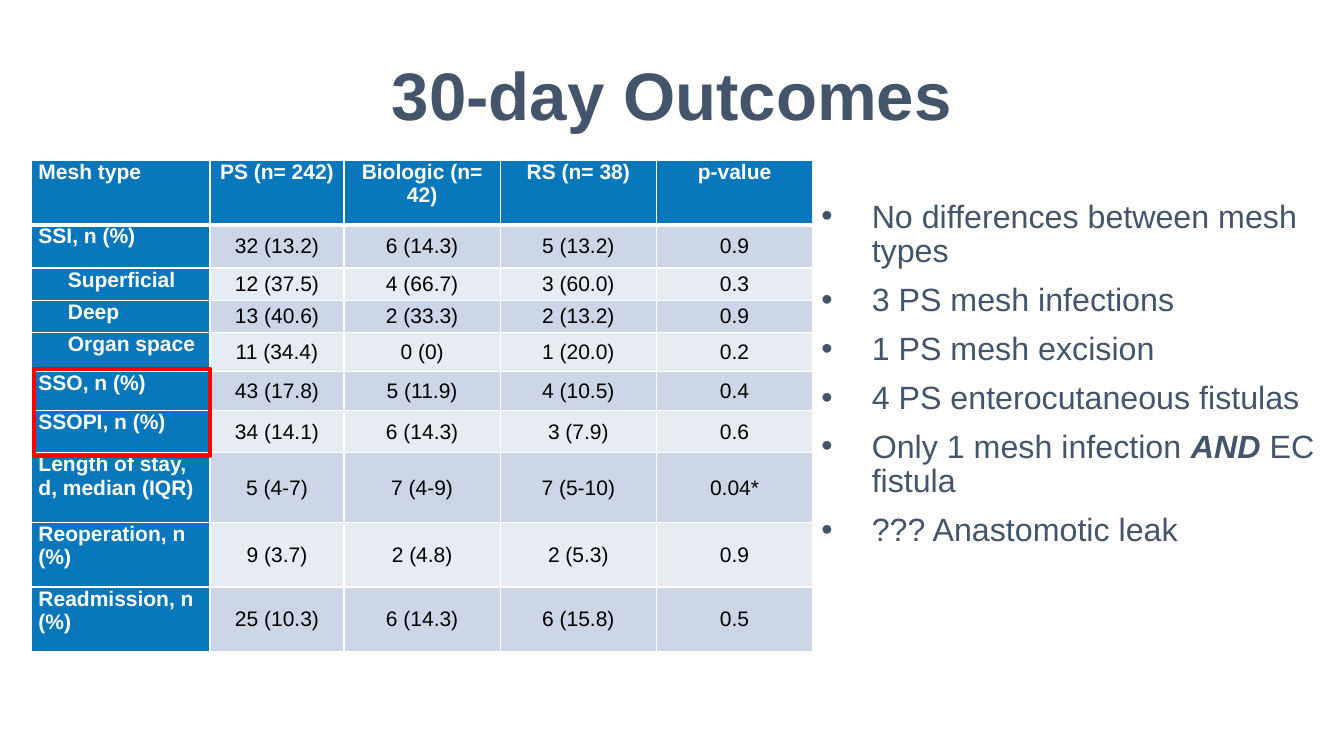
"""Build the 30-day outcomes slide with its table and findings."""
from lxml import etree
from pptx import Presentation
from pptx.dml.color import RGBColor
from pptx.enum import shapes, text
from pptx.oxml import ns
from pptx.util import Pt

TITLE = "30-day Outcomes"
HEADER = ["Mesh type", "PS (n= 242)", "Biologic (n= 42)", "RS (n= 38)", "p-value"]
OUTCOMES = [
    ("SSI, n (%)", "32 (13.2)", "6 (14.3)", "5 (13.2)", "0.9"),
    ("Superficial", "12 (37.5)", "4 (66.7)", "3 (60.0)", "0.3"),
    ("Deep", "13 (40.6)", "2 (33.3)", "2 (13.2)", "0.9"),
    ("Organ space", "11 (34.4)", "0 (0)", "1 (20.0)", "0.2"),
    ("SSO, n (%)", "43 (17.8)", "5 (11.9)", "4 (10.5)", "0.4"),
    ("SSOPI, n (%)", "34 (14.1)", "6 (14.3)", "3 (7.9)", "0.6"),
    ("Length of stay, d, median (IQR)", "5 (4-7)", "7 (4-9)", "7 (5-10)", "0.04*"),
    ("Reoperation, n (%)", "9 (3.7)", "2 (4.8)", "2 (5.3)", "0.9"),
    ("Readmission, n (%)", "25 (10.3)", "6 (14.3)", "6 (15.8)", "0.5"),
]
SUBTYPES = {"Superficial", "Deep", "Organ space"}
FINDINGS = [
    ["No differences between mesh types"],
    ["3 PS mesh infections"],
    ["1 PS mesh excision"],
    ["4 PS enterocutaneous fistulas"],
    ["Only 1 mesh infection ", "AND", " EC fistula"],
    ["??? Anastomotic leak"],
]
COLUMN_WIDTHS = [127.5, 95.75, 111.6, 111.6, 111.6]
ROW_HEIGHTS = [46, 31, 23, 23, 28, 28, 30, 50, 46, 46]
TABLE_LEFT, TABLE_TOP = 22.5, 114.5
SLATE, BLUE, WHITE, BLACK, RED = "44546A", "0877BC", "FFFFFF", "000000", "FF0000"
BANDS = ["CCD6E7", "E7ECF3"]


def color(value):
    return RGBColor.from_string(value)


def add_text(paragraph, words, size, fill, bold=False, italic=False, align=None, spacing=None):
    run = paragraph.add_run()
    run.text = words
    run.font.name = "Arial"
    run.font.size = Pt(size)
    run.font.bold = bold
    run.font.italic = italic
    run.font.color.rgb = color(fill)
    if align is not None:
        paragraph.alignment = align
    if spacing is not None:
        paragraph.line_spacing = spacing


def place(shape, left, top, width, height):
    shape.left, shape.top, shape.width, shape.height = map(Pt, (left, top, width, height))


def add_bullet(paragraph, indent):
    properties = paragraph._p.get_or_add_pPr()
    properties.set("marL", str(Pt(indent)))
    properties.set("indent", str(-Pt(indent)))
    etree.SubElement(properties, ns.qn("a:buFont"), typeface="Arial")
    etree.SubElement(properties, ns.qn("a:buChar"), char="•")


def set_borders(cell, bottom):
    properties = cell._tc.get_or_add_tcPr()
    for position, (side, width) in enumerate([("L", 1), ("R", 1), ("T", 1), ("B", bottom)]):
        line = etree.Element(ns.qn(f"a:ln{side}"), w=str(Pt(width)))
        solid = etree.SubElement(line, ns.qn("a:solidFill"))
        etree.SubElement(solid, ns.qn("a:srgbClr"), val=WHITE)
        properties.insert(position, line)


def add_outcomes(slide):
    rows = [HEADER, *OUTCOMES]
    frame = slide.shapes.add_table(
        len(rows), len(HEADER), Pt(TABLE_LEFT), Pt(TABLE_TOP),
        Pt(sum(COLUMN_WIDTHS)), Pt(sum(ROW_HEIGHTS)))
    table = frame.table
    for column, width in zip(table.columns, COLUMN_WIDTHS):
        column.width = Pt(width)
    for r, (row, height) in enumerate(zip(rows, ROW_HEIGHTS)):
        table.rows[r].height = Pt(height)
        for c, words in enumerate(row):
            cell = table.cell(r, c)
            heading = r == 0 or c == 0
            cell.margin_left = Pt(26 if words in SUBTYPES else 5)
            cell.margin_right = Pt(5)
            cell.margin_top = cell.margin_bottom = 0
            cell.vertical_anchor = text.MSO_ANCHOR.TOP if heading else text.MSO_ANCHOR.MIDDLE
            cell.fill.solid()
            cell.fill.fore_color.rgb = color(BLUE if heading else BANDS[(r - 1) % 2])
            set_borders(cell, bottom=3 if r == 0 else 1)
            add_text(cell.text_frame.paragraphs[0], words, 15,
                     WHITE if heading else BLACK, bold=heading,
                     align=text.PP_ALIGN.CENTER if c else text.PP_ALIGN.LEFT)


def add_findings(body):
    place(body, 579.5, 139.5, 408, 343)
    frame = body.text_frame
    frame.auto_size = text.MSO_AUTO_SIZE.NONE
    for i, parts in enumerate(FINDINGS):
        paragraph = frame.paragraphs[0] if i == 0 else frame.add_paragraph()
        paragraph.space_before = Pt(10 if i else 0)
        paragraph.line_spacing = 0.9
        add_bullet(paragraph, 36)
        for words in parts:
            stressed = words == "AND"
            add_text(paragraph, words, 23, SLATE, bold=stressed, italic=stressed)


def add_highlight(slide):
    box = slide.shapes.add_shape(
        shapes.MSO_SHAPE.RECTANGLE, Pt(24), Pt(263.5), Pt(126), Pt(62))
    box.shadow.inherit = False
    box.fill.background()
    box.line.color.rgb = color(RED)
    box.line.width = Pt(3)


def main():
    presentation = Presentation()
    presentation.slide_width, presentation.slide_height = Pt(960), Pt(540)
    slide = presentation.slides.add_slide(presentation.slide_layouts[1])
    title = slide.shapes.title
    place(title, 0, 18, 960, 104.5)
    title.text_frame.auto_size = text.MSO_AUTO_SIZE.NONE
    title.text_frame.vertical_anchor = text.MSO_ANCHOR.MIDDLE
    add_text(title.text_frame.paragraphs[0], TITLE, 48, SLATE, bold=True,
             align=text.PP_ALIGN.CENTER, spacing=0.9)
    add_findings(slide.placeholders[1])
    add_outcomes(slide)
    add_highlight(slide)
    presentation.save("out.pptx")


if __name__ == "__main__":
    main()
